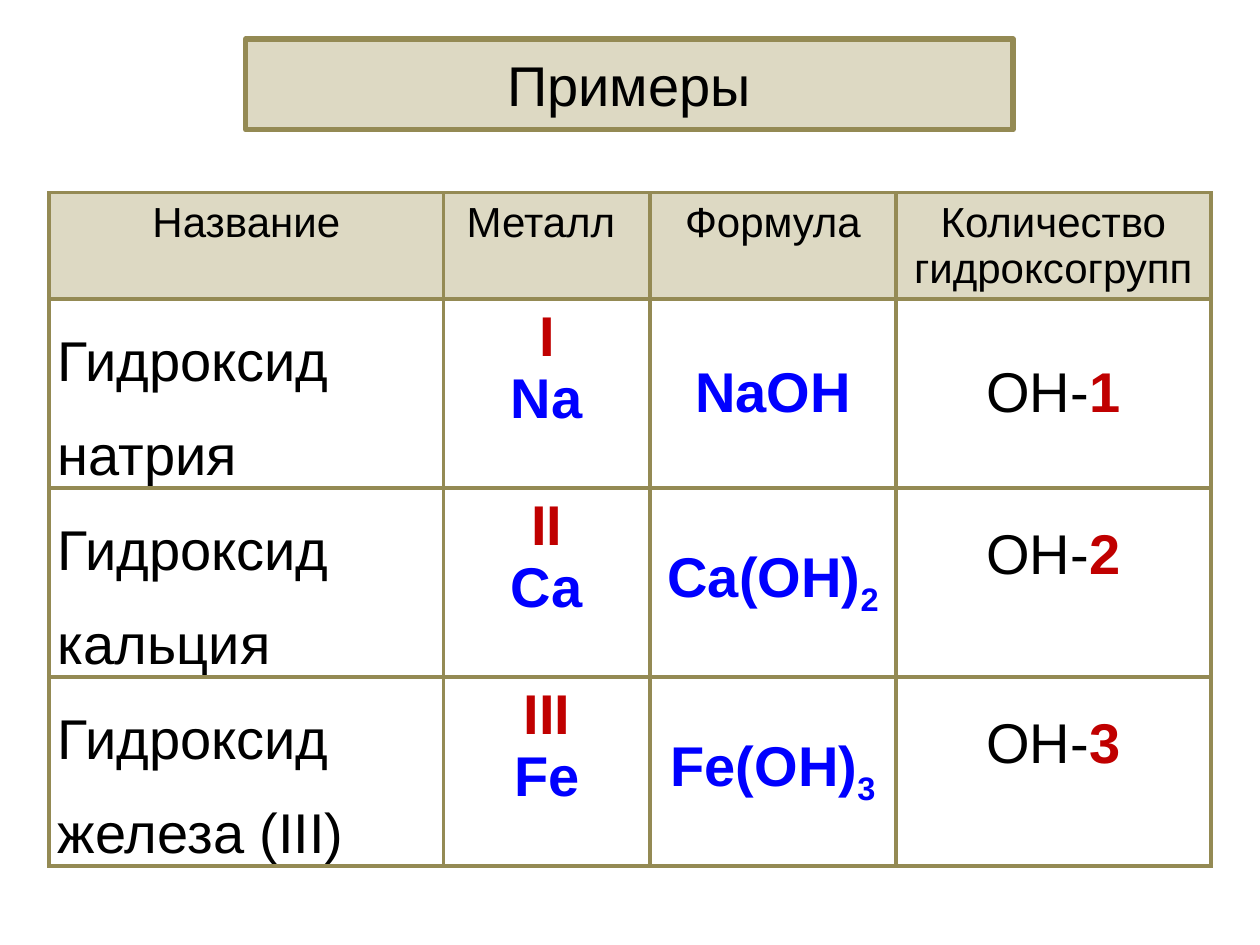
import pptx
import pptx.dml.color
import pptx.enum.shapes
import pptx.enum.text
import pptx.util
from lxml import etree
from pptx.oxml.ns import qn

Inches = pptx.util.Inches
Pt = pptx.util.Pt
ALIGN = pptx.enum.text.PP_ALIGN
ANCHOR = pptx.enum.text.MSO_ANCHOR

FONT = "Arial"
BLACK, RED, BLUE = "000000", "C00000", "0000FF"
BEIGE, OLIVE = "DDD9C3", "948A54"

HEADERS = ["Название", "Металл ", "Формула", "Количество гидроксогрупп"]
COLUMN_WIDTHS = [3.13, 1.64, 1.95, 2.5]
HEADER_HEIGHT, ROW_HEIGHT = 0.84, 1.5
# Name, valence, metal, formula, formula index, number of hydroxo groups
HYDROXIDES = [
    ("Гидроксид натрия", "I", "Na", "NaOH", "", "1"),
    ("Гидроксид кальция", "II", "Ca", "Ca(OH)", "2", "2"),
    ("Гидроксид железа (III)", "III", "Fe", "Fe(OH)", "3", "3"),
]


def color(value):
    return pptx.dml.color.RGBColor.from_string(value)


def format_run(run, size, value=BLACK, bold=False):
    run.font.name = FONT
    run.font.size = Pt(size)
    run.font.bold = bold
    run.font.color.rgb = color(value)


def write(paragraph, parts, size, align=ALIGN.CENTER):
    """Fill a paragraph with (text, colour, bold) parts."""
    paragraph.alignment = align
    for text, value, bold in parts:
        run = paragraph.add_run()
        run.text = text
        format_run(run, size, value, bold)


def set_borders(cell):
    properties = cell._tc.get_or_add_tcPr()
    for side in ("lnL", "lnR", "lnT", "lnB"):
        line = etree.SubElement(properties, qn(f"a:{side}"), w=str(Pt(2.25)))
        fill = etree.SubElement(line, qn("a:solidFill"))
        etree.SubElement(fill, qn("a:srgbClr"), val=OLIVE)


def add_title(slide, left, top, width, height):
    shape = slide.shapes.add_shape(
        pptx.enum.shapes.MSO_SHAPE.ROUNDED_RECTANGLE, left, top, width, height)
    shape.adjustments[0] = 0
    shape.shadow.inherit = False
    shape.fill.solid()
    shape.fill.fore_color.rgb = color(BEIGE)
    shape.line.color.rgb = color(OLIVE)
    shape.line.width = Pt(3)
    shape.text_frame.vertical_anchor = ANCHOR.MIDDLE
    write(shape.text_frame.paragraphs[0], [("Примеры", BLACK, False)], 32)


def fill_hydroxide_row(cells, hydroxide):
    name, valence, metal, formula, index, count = hydroxide
    name_cell, metal_cell, formula_cell, count_cell = cells

    # Name
    name_cell.margin_left = name_cell.margin_right = Inches(0.07)
    name_cell.margin_top = name_cell.margin_bottom = 0
    paragraph = name_cell.text_frame.paragraphs[0]
    paragraph.line_spacing = 1.5
    write(paragraph, [(name, BLACK, False)], 32, ALIGN.LEFT)

    # Valence above the metal
    frame = metal_cell.text_frame
    write(frame.paragraphs[0], [(valence, RED, True)], 32)
    write(frame.add_paragraph(), [(metal, BLUE, True)], 32)

    # Formula with its index
    formula_cell.vertical_anchor = ANCHOR.MIDDLE
    paragraph = formula_cell.text_frame.paragraphs[0]
    write(paragraph, [(formula, BLUE, True)], 32)
    if index:
        write(paragraph, [(index, BLUE, True)], 32)
        paragraph.runs[-1].font._element.set("baseline", "-25000")

    # Number of groups, raised where the formula has an index
    count_cell.vertical_anchor = ANCHOR.MIDDLE
    if index:
        count_cell.margin_bottom = Inches(0.48)
    write(count_cell.text_frame.paragraphs[0],
          [("OH-", BLACK, False), (count, RED, True)], 32)


def add_hydroxide_table(slide, left, top, width, height):
    table = slide.shapes.add_table(
        len(HYDROXIDES) + 1, len(HEADERS), left, top, width, height).table
    table.first_row = table.horz_banding = False
    for column, column_width in zip(table.columns, COLUMN_WIDTHS):
        column.width = Inches(column_width)
    for number, row in enumerate(table.rows):
        row.height = Inches(ROW_HEIGHT if number else HEADER_HEIGHT)
        for cell in row.cells:
            set_borders(cell)
            if number:
                cell.fill.background()
            else:
                cell.fill.solid()
                cell.fill.fore_color.rgb = color(BEIGE)

    # Header row
    for cell, header in zip(table.rows[0].cells, HEADERS):
        write(cell.text_frame.paragraphs[0], [(header, BLACK, False)], 24)

    # One row for each hydroxide
    for number, hydroxide in enumerate(HYDROXIDES, start=1):
        fill_hydroxide_row(list(table.rows[number].cells), hydroxide)


def main():
    presentation = pptx.Presentation()
    presentation.slide_width = Inches(10)
    presentation.slide_height = Inches(7.5)
    slide = presentation.slides.add_slide(presentation.slide_layouts[6])
    add_title(slide, Inches(1.95), Inches(0.31), Inches(6.09), Inches(0.72))
    add_hydroxide_table(slide, Inches(0.39), Inches(1.53),
                        Inches(sum(COLUMN_WIDTHS)),
                        Inches(HEADER_HEIGHT + ROW_HEIGHT * len(HYDROXIDES)))
    presentation.save("out.pptx")


if __name__ == "__main__":
    main()
